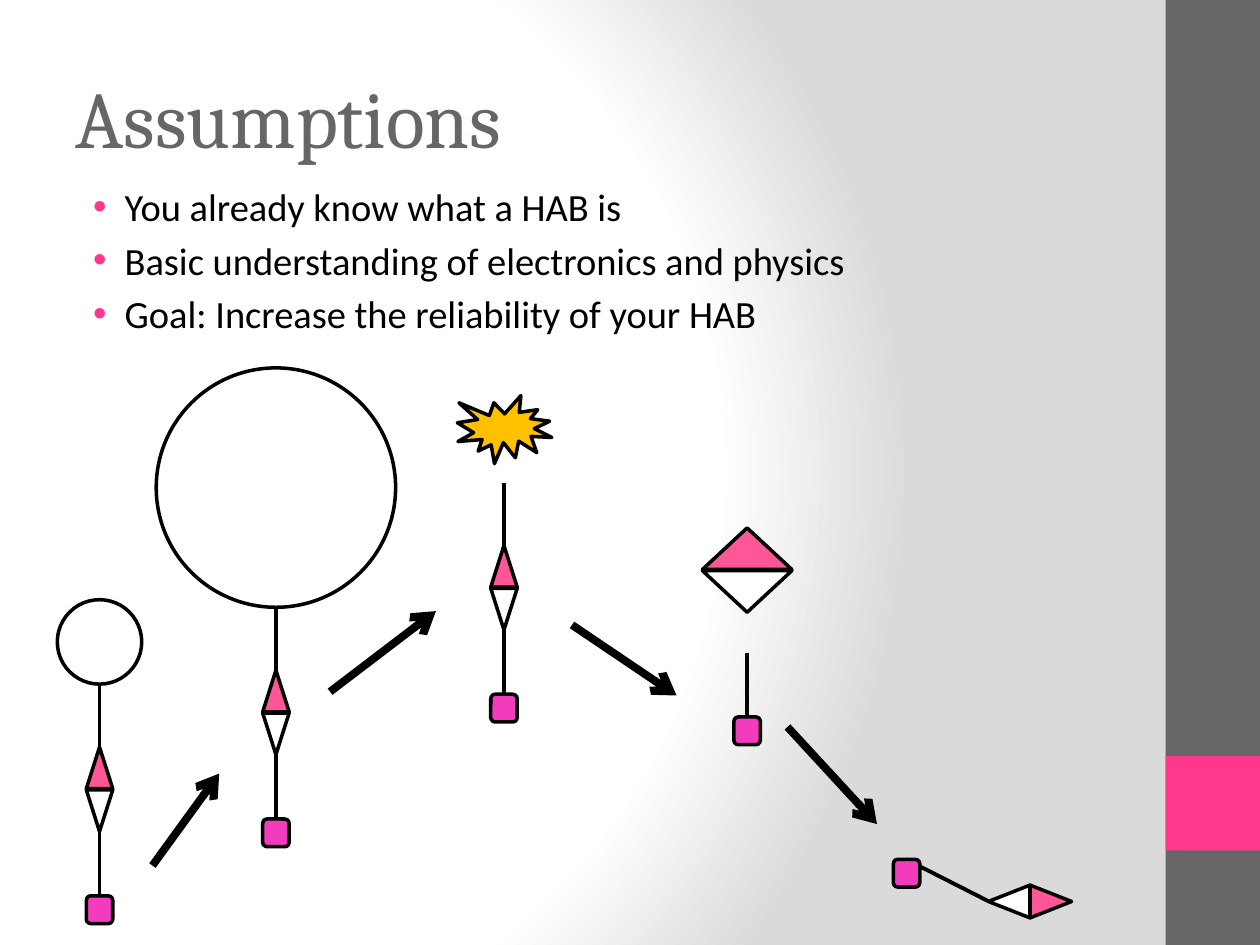
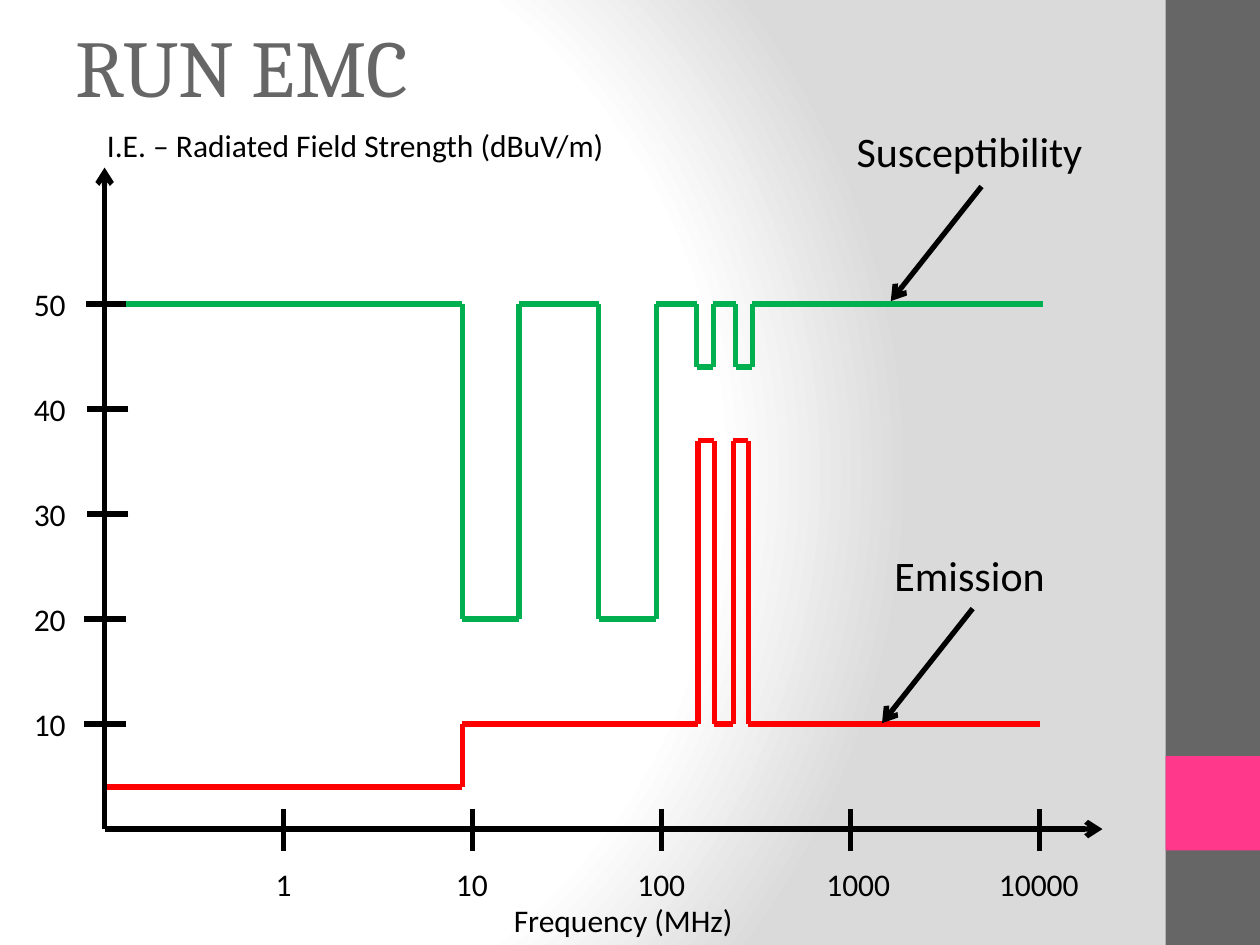
from itertools import pairwise

from lxml import etree
from pptx import Presentation
from pptx.dml.color import RGBColor
from pptx.enum.shapes import MSO_CONNECTOR as Connector, MSO_SHAPE as Shape
from pptx.enum.text import MSO_ANCHOR as Anchor, MSO_AUTO_SIZE as AutoSize, PP_ALIGN as Align
from pptx.oxml import parse_xml
from pptx.oxml.ns import nsdecls, qn
from pptx.util import Inches, Pt

COLORS = {
    "black": "000000",
    "white": "FFFFFF",
    "shade": "DADADA",
    "gray": "666666",
    "accent": "FF388C",
    "canopy": "FF5698",
    "payload": "F33BBE",
    "burst": "FFC000",
    "emission": "FF0000",
    "susceptibility": "00B050",
}
TITLE_FONT = {"name": "Cambria", "size": Pt(46)}
BODY_FONT = {"name": "Calibri", "size": Pt(22)}
LABEL_FONT = {"name": "Calibri", "size": Pt(18)}
CALLOUT_FONT = {"name": "Calibri", "size": Pt(24)}
PANEL_HEIGHT = 0.33
PANEL_STEP = 0.34
CORD_LENGTH = 0.5
AXIS_LEFT, AXIS_BOTTOM = 0.83, 6.58


def rgb(color):
    return RGBColor.from_string(COLORS[color])


def set_values(target, values):
    for name, value in values.items():
        setattr(target, name, value)


def set_font(font, values, color="black"):
    set_values(font, values)
    font.color.rgb = rgb(color)


def place(shape, left, top, width, height):
    box = {"left": left, "top": top, "width": width, "height": height}
    set_values(shape, {name: Inches(value) for name, value in box.items()})


def add_figure(slide, kind, box, color, outlined=True, rotation=0, flipped=False):
    shape = slide.shapes.add_shape(kind, *map(Inches, box))
    shape.shadow.inherit = False
    shape.fill.solid()
    shape.fill.fore_color.rgb = rgb(color)
    shape.rotation = rotation
    if outlined:
        shape.line.color.rgb = rgb("black")
        shape.line.width = Pt(2)
    else:
        shape.line.fill.background()
    if flipped:
        shape.element.spPr.xfrm.set("flipV", "1")
    return shape


def add_line(slide, start, end, width=3, color="black", arrow=False):
    connector = slide.shapes.add_connector(Connector.STRAIGHT, *map(Inches, (*start, *end)))
    connector.line.color.rgb = rgb(color)
    connector.line.width = Pt(width)
    if arrow:
        etree.SubElement(connector.get_or_add_ln(), qn("a:tailEnd"), type="arrow")
    etree.SubElement(connector.element.spPr, qn("a:effectLst"))
    return connector


def add_text(slide, text, box, font=LABEL_FONT, align=Align.LEFT, wrap=False):
    shape = slide.shapes.add_textbox(*map(Inches, box))
    set_values(shape.text_frame, {"word_wrap": wrap, "auto_size": AutoSize.SHAPE_TO_FIT_TEXT})
    paragraph = shape.text_frame.paragraphs[0]
    paragraph.alignment = align
    run = paragraph.add_run()
    run.text = text
    set_font(run.font, font)


def set_background(master):
    stops = "".join(
        f'<a:gs pos="{position}"><a:srgbClr val="{COLORS[color]}"/></a:gs>'
        for position, color in ((0, "white"), (75000, "white"), (100000, "shade"))
    )
    background = parse_xml(
        f'<p:bg {nsdecls("p", "a")}><p:bgPr><a:gradFill rotWithShape="1">'
        f'<a:gsLst>{stops}</a:gsLst><a:path path="circle">'
        '<a:fillToRect l="20000" t="50000" r="100000" b="50000"/></a:path>'
        '</a:gradFill><a:effectLst/></p:bgPr></p:bg>'
    )
    content = master.element.cSld
    for existing in content.findall(qn("p:bg")):
        content.remove(existing)
    content.insert(0, background)


def add_master_bands(slide, master):
    bands = (((9.25, 0, 0.75, 7.5), "gray"), ((9.25, 6, 0.75, 0.75), "accent"))
    for index, (box, color) in enumerate(bands):
        band = add_figure(slide, Shape.RECTANGLE, box, color, outlined=False).element
        band.find(f'.//{qn("p:cNvPr")}').set("id", str(101 + index))
        master.shapes.element.insert(2 + index, band)


def set_title(slide, text, top, height):
    title = slide.shapes.title
    place(title, 0.5, top, 8.33, height)
    set_values(title.text_frame, {"vertical_anchor": Anchor.MIDDLE, "auto_size": AutoSize.NONE})
    paragraph = title.text_frame.paragraphs[0]
    paragraph.alignment = Align.LEFT
    run = paragraph.add_run()
    run.text = text
    set_font(run.font, TITLE_FONT, "gray")
    run.font.element.set("spc", "-100") if hasattr(run.font, "element") else None


def set_bullets(slide, items):
    body = slide.placeholders[1]
    place(body, 0.51, 1.4, 8.33, 5.25)
    frame = body.text_frame
    frame.auto_size = AutoSize.NONE
    frame.text = "\n".join(items)
    for paragraph in frame.paragraphs:
        set_font(paragraph.runs[0].font, BODY_FONT)
        paragraph.space_before = Pt(4.4)
        properties = paragraph.runs[0].font and paragraph._p.get_or_add_pPr()
        properties.set("marL", str(Inches(0.38)))
        properties.set("indent", str(Inches(-0.25)))
        bullet_color = etree.SubElement(properties, qn("a:buClr"))
        etree.SubElement(bullet_color, qn("a:srgbClr"), val=COLORS["accent"])
        etree.SubElement(properties, qn("a:buFont"), typeface="Arial")
        etree.SubElement(properties, qn("a:buChar"), char="•")


def add_canopy(slide, center, top, width):
    left = center - width / 2
    add_figure(slide, Shape.ISOSCELES_TRIANGLE, (left, top, width, PANEL_HEIGHT), "canopy")
    lower_box = (left, top + PANEL_STEP, width, PANEL_HEIGHT)
    add_figure(slide, Shape.ISOSCELES_TRIANGLE, lower_box, "white", flipped=True)


def add_payload(slide, center, top):
    return add_figure(slide, Shape.ROUNDED_RECTANGLE, (center - 0.105, top, 0.21, 0.22), "payload")


def add_hanging_payload(slide, center, top):
    bottom = top + CORD_LENGTH
    cord = add_line(slide, (center, top), (center, bottom), 2.25)
    cord.end_connect(add_payload(slide, center, bottom + 0.01), 0)


def add_flight_rig(slide, center, top):
    canopy_top = top + CORD_LENGTH
    add_line(slide, (center, top), (center, canopy_top), 2.25)
    add_canopy(slide, center, canopy_top, 0.21)
    add_hanging_payload(slide, center, canopy_top + PANEL_STEP + PANEL_HEIGHT)


def add_balloon(slide, center, top, diameter):
    box = (center - diameter / 2, top, diameter, diameter)
    add_figure(slide, Shape.OVAL, box, "white")
    add_flight_rig(slide, center, top + diameter)


def add_landed_rig(slide):
    for left, color, flipped in ((8.21, "canopy", False), (7.88, "white", True)):
        box = (left, 6.99, 0.26, PANEL_HEIGHT)
        add_figure(slide, Shape.ISOSCELES_TRIANGLE, box, color, rotation=90, flipped=flipped)
    add_line(slide, (7.84, 7.15), (7.19, 6.82), 2.25)
    add_payload(slide, 7.195, 6.82)


def build_assumptions(slide):
    set_title(slide, "Assumptions", 0.3, 1.25)
    set_bullets(slide, (
        "You already know what a HAB is",
        "Basic understanding of electronics and physics",
        "Goal: Increase the reliability of your HAB",
    ))
    add_balloon(slide, 0.79, 4.76, 0.67)
    add_balloon(slide, 2.19, 2.92, 1.9)
    add_flight_rig(slide, 4, 3.83)
    add_figure(slide, Shape.EXPLOSION1, (3.63, 3.14, 0.75, 0.54), "burst")
    add_canopy(slide, 5.93, 4.19, 0.71)
    add_hanging_payload(slide, 5.93, 5.18)
    add_landed_rig(slide)
    for start, end in (
        ((1.21, 6.87), (1.74, 6.14)),
        ((2.62, 5.49), (3.46, 4.85)),
        ((4.54, 4.96), (5.37, 5.52)),
        ((6.25, 5.77), (6.96, 6.54)),
    ):
        add_line(slide, start, end, 4.5, arrow=True)


def level(strength):
    return AXIS_BOTTOM - strength / 12


def add_axes(slide):
    origin = (AXIS_LEFT, AXIS_BOTTOM)
    for end in ((AXIS_LEFT, 1.33), (8.75, AXIS_BOTTOM)):
        add_line(slide, origin, end, arrow=True)
    frequencies = (("1", 2.09, 0.33), ("10", 3.52, 0.46), ("100", 4.96, 0.59),
                   ("1000", 6.46, 0.71), ("10000", 7.83, 0.84))
    for index, (label, left, width) in enumerate(frequencies):
        tick = 2.25 + 1.5 * index
        add_line(slide, (tick, 6.42), (tick, 6.75))
        add_text(slide, label, (left, 6.82, width, 0.4))
    for strength, left in zip(range(10, 60, 10), (0.67, 0.67, 0.69, 0.69, 0.68)):
        height = level(strength)
        add_line(slide, (left + 0.33, height), (left, height))
        add_text(slide, str(strength), (0.17, height - 0.2, 0.46, 0.4))
    add_text(slide, "Frequency (MHz)", (3.98, 7.1, 1.96, 0.4))
    add_text(slide, "I.E. – Radiated Field Strength (dBuV/m)", (0.75, 0.95, 4.19, 0.4))


def add_trace(slide, steps, end, color):
    points = [(steps[0][0], level(steps[0][1]))]
    for (_, before), (position, after) in pairwise(steps):
        points += [(position, level(before)), (position, level(after))]
    points.append((end, level(steps[-1][1])))
    for start, stop in pairwise(points):
        add_line(slide, start, stop, color=color)


def add_callout(slide, text, box, start, end):
    add_line(slide, start, end, arrow=True)
    add_text(slide, text, box, CALLOUT_FONT, Align.CENTER, wrap=True)


def build_emc(slide):
    set_title(slide, "RUN EMC", 0.17, 0.7)
    add_axes(slide)
    emission = ((0.85, 4), (3.67, 10), (5.54, 37), (5.67, 10), (5.82, 37), (5.94, 10))
    susceptibility = ((1, 50), (3.67, 20), (4.12, 50), (4.75, 20), (5.21, 50),
                      (5.53, 44), (5.66, 50), (5.84, 44), (5.97, 50))
    add_trace(slide, emission, 8.25, "emission")
    add_trace(slide, susceptibility, 8.28, "susceptibility")
    add_callout(slide, "Emission", (6.79, 4.31, 1.81, 0.5), (7.72, 4.83), (7, 5.74))
    add_callout(slide, "Susceptibility", (6.61, 0.95, 2.17, 0.5), (7.79, 1.48), (7.07, 2.39))


def main():
    presentation = Presentation()
    set_values(presentation, {"slide_width": Inches(10), "slide_height": Inches(7.5)})
    master = presentation.slide_master
    set_background(master)
    assumptions = presentation.slides.add_slide(presentation.slide_layouts[1])
    add_master_bands(assumptions, master)
    build_assumptions(assumptions)
    build_emc(presentation.slides.add_slide(presentation.slide_layouts[5]))
    presentation.save("out.pptx")


if __name__ == "__main__":
    main()
